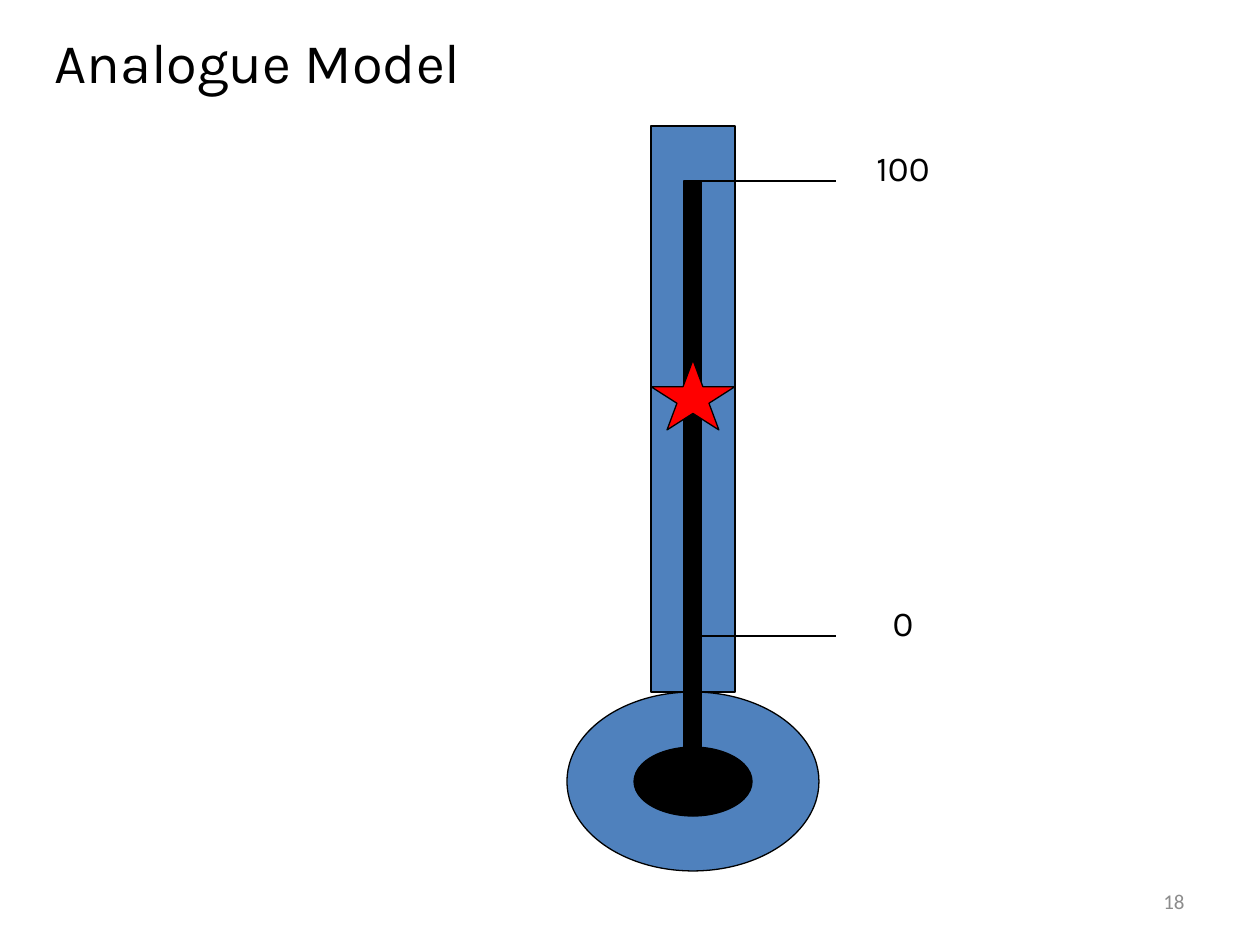
from typing import NamedTuple

from lxml.etree import SubElement
from pptx import Presentation
from pptx.dml.color import RGBColor
from pptx.enum.shapes import MSO_CONNECTOR, MSO_SHAPE
from pptx.enum.text import MSO_ANCHOR, PP_ALIGN
from pptx.oxml.ns import qn
from pptx.slide import Slide
from pptx.util import Emu, Pt

EMU_PER_PIXEL = 914400 / 126
BLUE, BLACK, RED, GREY = "4F81BD", "000000", "FF0000", "8C8C8C"


class Part(NamedTuple):
    kind: MSO_SHAPE
    left: int
    top: int
    width: int
    height: int
    fill: str


class Label(NamedTuple):
    text: str
    left: int
    top: int
    width: int
    height: int
    size: int
    align: PP_ALIGN = PP_ALIGN.CENTER
    font: str = "Karla"
    color: str = BLACK
    anchor: MSO_ANCHOR = MSO_ANCHOR.TOP


class Mark(NamedTuple):
    text: str
    level: int


THERMOMETER = [
    Part(MSO_SHAPE.OVAL, 567, 692, 252, 179, BLUE),
    Part(MSO_SHAPE.RECTANGLE, 651, 126, 84, 566, BLUE),
    Part(MSO_SHAPE.OVAL, 634, 747, 118, 69, BLACK),
    Part(MSO_SHAPE.RECTANGLE, 684, 181, 17, 595, BLACK),
    Part(MSO_SHAPE.STAR_5_POINT, 651, 360, 84, 70, RED),
]
MARKS = [Mark("100", 181), Mark("0", 636)]
TITLE = Label("Analogue Model", 42, 21, 528, 81, 32, PP_ALIGN.LEFT)
PAGE_NUMBER = Label("18", 903, 876, 294, 50, 12, PP_ALIGN.RIGHT,
                    "Calibri", GREY, MSO_ANCHOR.MIDDLE)


def px(length: int) -> Emu:
    return Emu(round(length * EMU_PER_PIXEL))


def color(value: str) -> RGBColor:
    return RGBColor.from_string(value)


def draw_part(page: Slide, part: Part) -> None:
    shape = page.shapes.add_shape(part.kind, px(part.left), px(part.top),
                                  px(part.width), px(part.height))
    shape.shadow.inherit = False
    shape.fill.solid()
    shape.fill.fore_color.rgb = color(part.fill)
    shape.line.color.rgb = color(BLACK)
    shape.line.width = Pt(0.75)


def draw_label(page: Slide, label: Label) -> None:
    box = page.shapes.add_textbox(px(label.left), px(label.top),
                                  px(label.width), px(label.height))
    frame = box.text_frame
    frame.word_wrap = True
    frame.vertical_anchor = label.anchor
    para = frame.paragraphs[0]
    para.text = label.text
    para.alignment = label.align
    para.font.name = label.font
    para.font.size = Pt(label.size)
    para.font.color.rgb = color(label.color)


def draw_mark(page: Slide, mark: Mark) -> None:
    line = page.shapes.add_connector(MSO_CONNECTOR.STRAIGHT, px(684), px(mark.level),
                                     px(836), px(mark.level))
    line.line.color.rgb = color(BLACK)
    line.line.width = Pt(0.75)
    SubElement(line._element.spPr, qn("a:effectLst"))
    draw_label(page, Label(mark.text, 819, mark.level - 41, 168, 54, 20))


def main() -> None:
    deck = Presentation()
    deck.slide_width, deck.slide_height = px(1260), px(945)
    page = deck.slides.add_slide(deck.slide_layouts[6])
    for part in THERMOMETER:
        draw_part(page, part)
    for mark in MARKS:
        draw_mark(page, mark)
    for label in (TITLE, PAGE_NUMBER):
        draw_label(page, label)
    deck.save("out.pptx")


if __name__ == "__main__":
    main()
